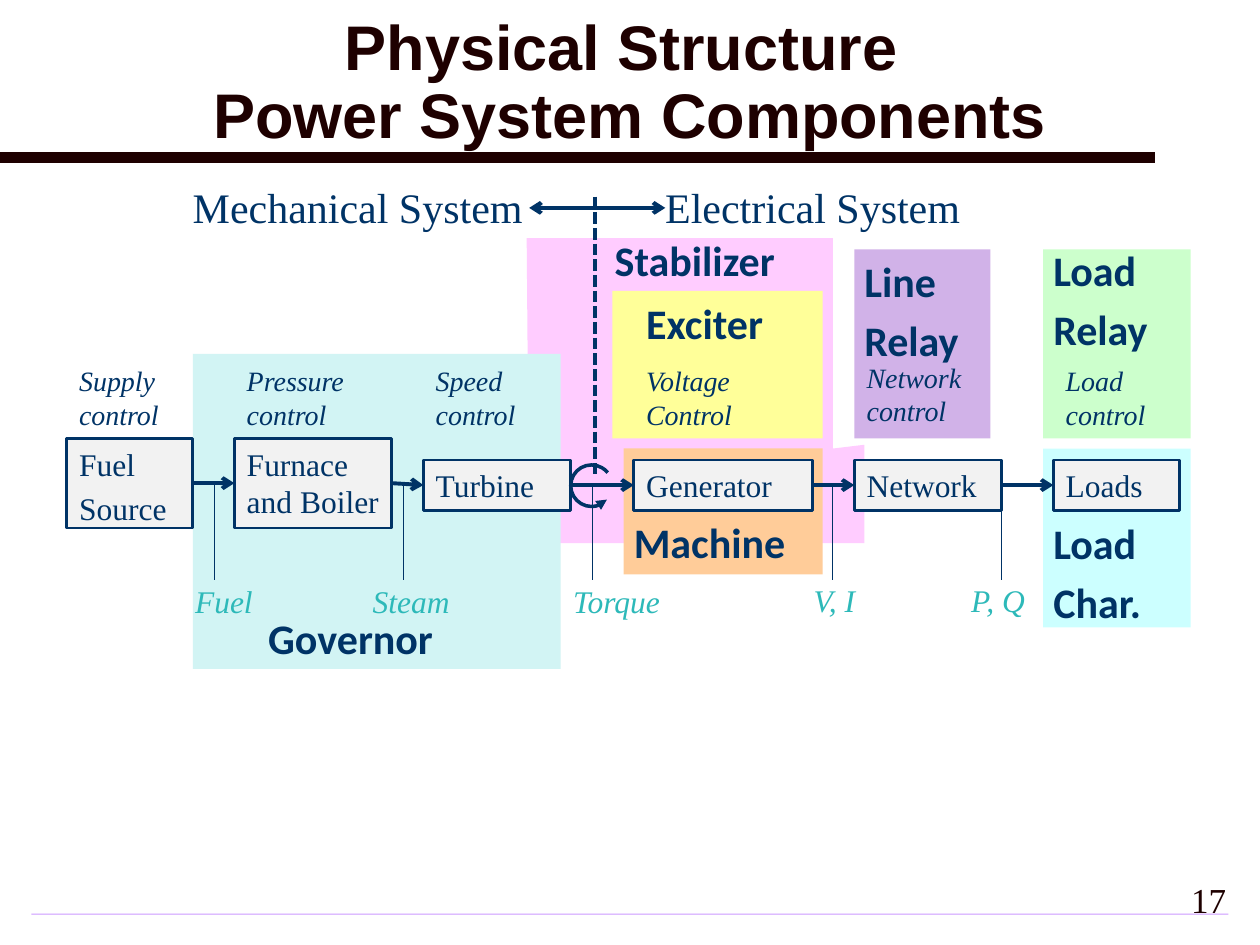
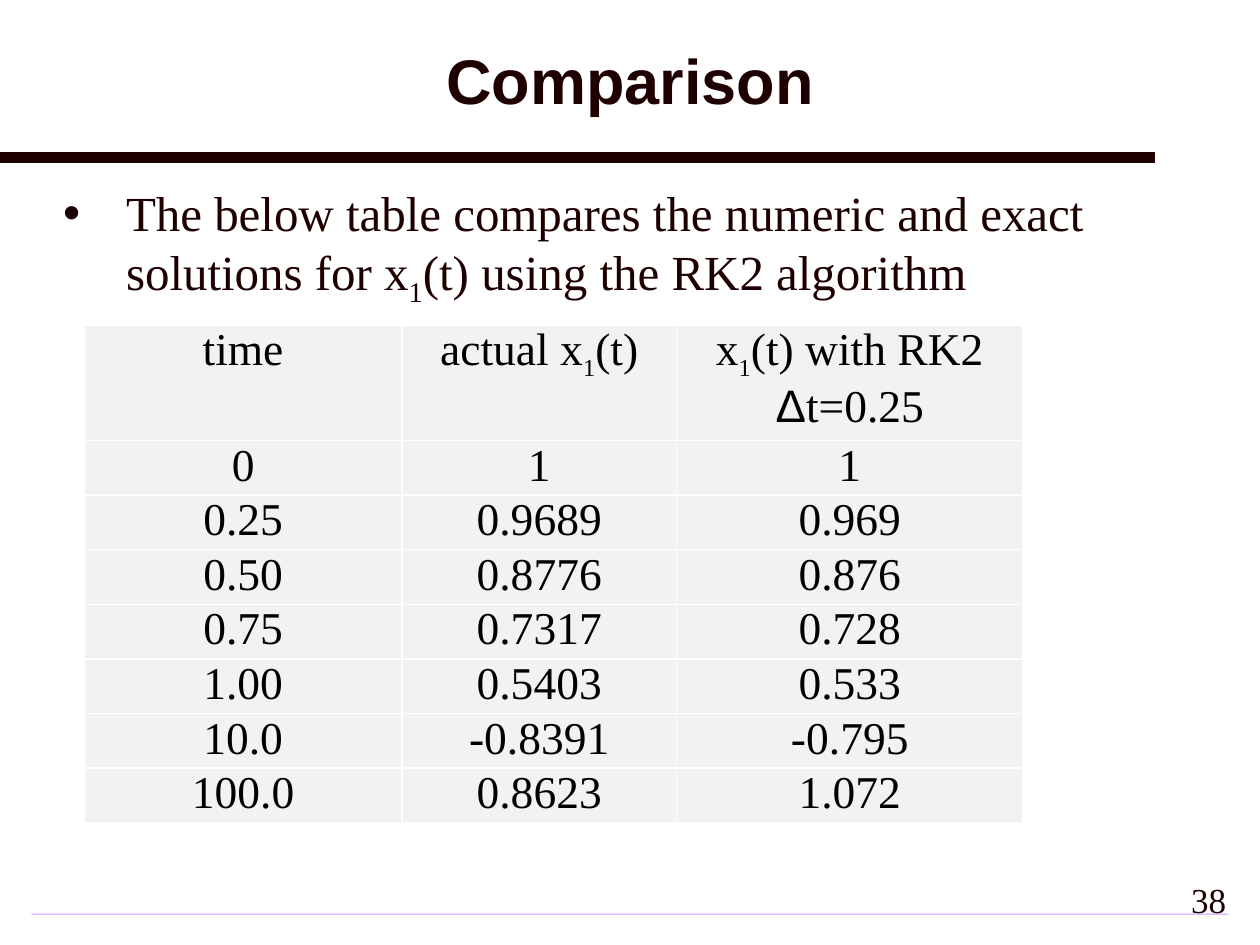
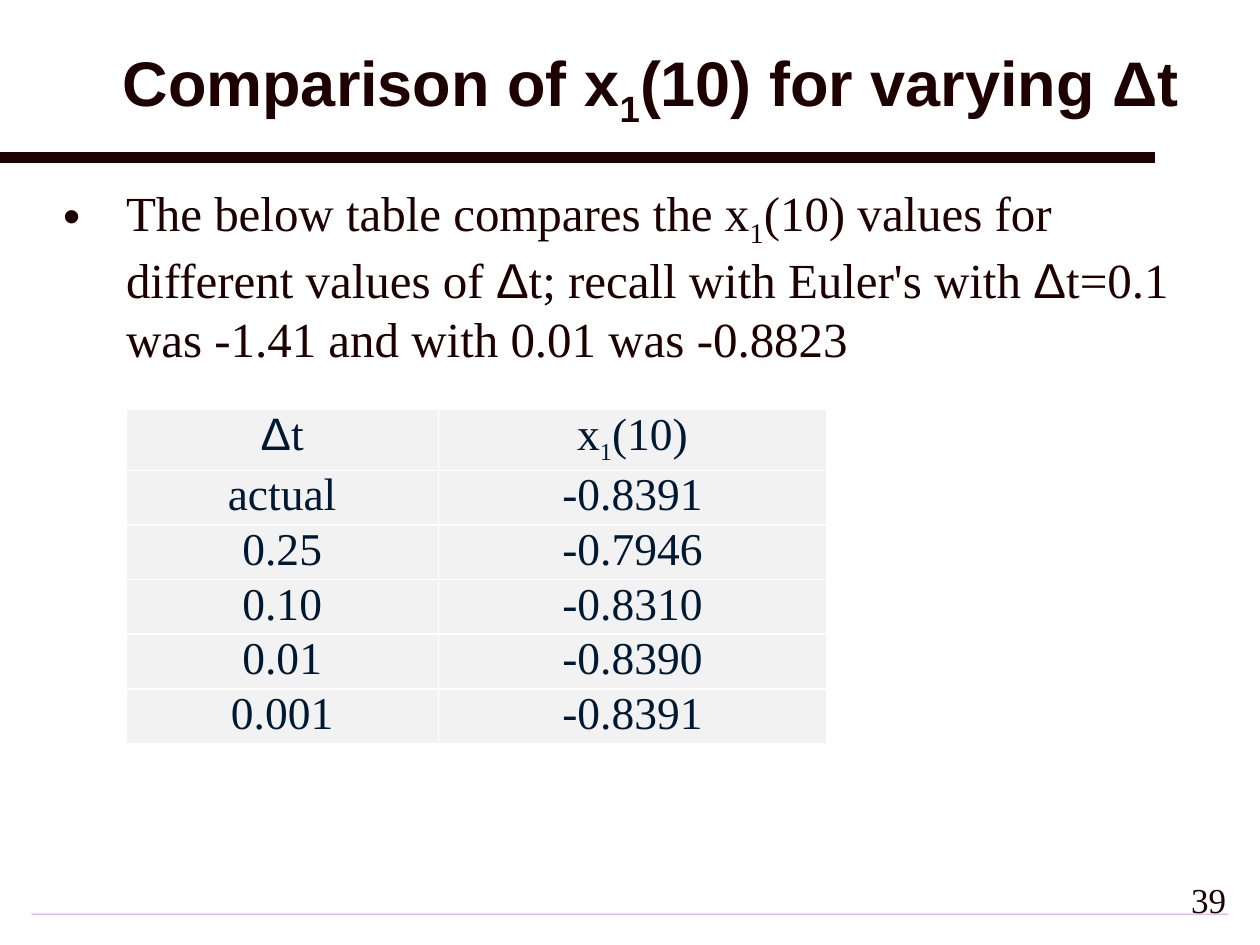
from itertools import pairwise

from lxml.etree import SubElement
from pptx import Presentation
from pptx.dml.color import RGBColor
from pptx.enum.dml import MSO_LINE
from pptx.enum.shapes import MSO_CONNECTOR, MSO_SHAPE
from pptx.enum.text import MSO_ANCHOR, MSO_AUTO_SIZE, PP_ALIGN
from pptx.oxml.ns import qn
from pptx.util import Inches, Pt

SERIF, SANS, HEADING = "Times New Roman", "Arial", "Calibri"
INK, NAVY, TEAL, MIDNIGHT = "1E0000", "003366", "2DB9B9", "001933"
PALE, WHITE, BLACK, LILAC = "F2F2F2", "FFFFFF", "000000", "CC99FF"
LAYOUT_CONTENT, LAYOUT_TITLE_ONLY = 1, 5

STABILIZER_ZONE = [(6.86, 4.31), (6.86, 3.53), (6.61, 3.56), (6.61, 1.89), (4.18, 1.89), (4.2, 4.31)]
STABILIZER_COLOR = "FFCCFF"
ZONES = [
    ((6.78, 1.98, 1.08, 1.5), "D1B2E8"),
    ((8.28, 1.98, 1.17, 1.5), "CCFFCC"),
    ((8.28, 3.56, 1.17, 1.42), "CCFFFF"),
    ((1.53, 2.81, 2.92, 2.5), "D2F4F4"),
    ((4.86, 2.31, 1.67, 1.17), "FFFF99"),
    ((4.95, 3.56, 1.58, 1), "FFCC99"),
]
COMPONENTS = [
    ("Fuel\nSource", (0.53, 3.48, 1, 0.71)),
    ("Furnace and Boiler", (1.86, 3.48, 1.25, 0.71)),
    ("Turbine", (3.36, 3.65, 1.17, 0.4)),
    ("Generator", (5.03, 3.65, 1.42, 0.4)),
    ("Network", (6.78, 3.65, 1.17, 0.4)),
    ("Loads", (8.36, 3.65, 1, 0.4)),
]
CONTROLS = [
    ("Supply control", (0.53, 2.84, 1, 0.64)),
    ("Pressure control", (1.86, 2.84, 1.25, 0.64)),
    ("Speed control", (3.36, 2.84, 1, 0.64)),
    ("Voltage Control", (5.03, 2.84, 1.42, 0.64)),
    ("Network control", (6.78, 2.81, 1.08, 0.64)),
    ("Load control", (8.36, 2.84, 1, 0.64)),
]
SIGNALS = [
    ("Fuel", (1.45, 4.57, 0.92, 0.4), 1.7),
    ("Steam", (2.86, 4.57, 1.25, 0.4), 3.2),
    ("Torque", (4.45, 4.57, 1.12, 0.4), 4.7),
    ("V, I", (6.36, 4.56, 0.67, 0.4), 6.61),
    ("P, Q", (7.61, 4.56, 0.67, 0.4), 7.95),
]
SYSTEMS = [
    ("Mechanical System", (1.53, 1.39, 2.67, 0.51)),
    ("Electrical System", (5.28, 1.39, 3, 0.51)),
]
MODELS = [
    ("Governor", (2.03, 4.81, 2.25, 0.51), 0.1),
    ("Machine", (5.03, 4.05, 1.42, 0.51), 0),
    ("Exciter", (5.03, 2.31, 1.42, 0.51), 0.1),
    ("Load\nChar.", (8.36, 4.06, 1, 0.91), 0),
    ("Load\nRelay", (8.36, 1.89, 1, 0.91), 0),
    ("Line\nRelay", (6.86, 1.98, 0.83, 0.91), 0),
    ("Stabilizer", (4.78, 1.81, 1.58, 0.51), 0.1),
]
SHAFT_Y = 3.85

TITLE_BOX = (0.25, 0.08, 9.5, 1.17)
COMPARISONS = [
    {
        "number": 38,
        "title": "Comparison",
        "title_box": TITLE_BOX,
        "body": "The below table compares the numeric and exact solutions for x~1~(t) using the RK2 algorithm",
        "body_box": (0.4, 1.4, 9.34, 1.27),
        "table_at": (0.67, 2.58),
        "columns": [2.52, 2.18, 2.75],
        "header_height": 0.85,
        "color": BLACK,
        "rows": [
            ("time", "actual x~1~(t)", "x~1~(t) with RK2\nΔt=0.25"),
            ("0", "1", "1"),
            ("0.25", "0.9689", "0.969"),
            ("0.50", "0.8776", "0.876"),
            ("0.75", "0.7317", "0.728"),
            ("1.00", "0.5403", "0.533"),
            ("10.0", "-0.8391", "-0.795"),
            ("100.0", "0.8623", "1.072"),
        ],
    },
    {
        "number": 39,
        "title": "Comparison of x~1~(10) for varying Δt",
        "title_box": (0.5, 0.08, 9.33, 1.17),
        "body": "The below table compares the x~1~(10) values for different values of Δt; "
                "recall with Euler's with Δt=0.1 was -1.41 and with 0.01 was -0.8823",
        "body_box": (0.4, 1.4, 9.34, 1.85),
        "table_at": (1, 3.25),
        "columns": [2.48, 3.08],
        "header_height": 0.45,
        "color": MIDNIGHT,
        "rows": [
            ("Δt", "x~1~(10)"),
            ("actual", "-0.8391"),
            ("0.25", "-0.7946"),
            ("0.10", "-0.8310"),
            ("0.01", "-0.8390"),
            ("0.001", "-0.8391"),
        ],
    },
]
ROW_HEIGHT = 0.4


def rgb(color):
    return RGBColor.from_string(color)


def inches(box):
    return [Inches(length) for length in box]


def add_runs(paragraph, text, sub_size=None):
    for index, piece in enumerate(text.split("~")):
        for part in piece.replace("Δ", "|Δ|").split("|"):
            if not part:
                continue
            run = paragraph.add_run()
            run.text = part
            if part == "Δ":
                run.font.name = SANS
            if index % 2:
                run.font._element.set("baseline", "-25000")
                if sub_size:
                    run.font.size = Pt(sub_size)


def style(paragraph, size, color, face=SERIF, bold=False, italic=False):
    font = paragraph.font
    font.name, font.size, font.bold, font.italic = face, Pt(size), bold, italic
    font.color.rgb = rgb(color)


def write(frame, text, size, color, align=PP_ALIGN.LEFT, sub_size=None, gap=0.2, **look):
    frame.word_wrap = True
    for index, line in enumerate(text.split("\n")):
        paragraph = frame.add_paragraph() if index else frame.paragraphs[0]
        add_runs(paragraph, line, sub_size)
        paragraph.alignment = align
        paragraph.space_before = Pt(gap * size if index else 0)
        style(paragraph, size, color, **look)


def add_label(slide, text, box, size, color, inset=0.1, **look):
    frame = slide.shapes.add_textbox(*inches(box)).text_frame
    frame.margin_left = frame.margin_right = Inches(inset)
    write(frame, text, size, color, **look)


def paint(shape, fill, outline=None):
    shape.shadow.inherit = False
    shape.fill.solid()
    shape.fill.fore_color.rgb = rgb(fill)
    if outline:
        shape.line.color.rgb = rgb(outline)
        shape.line.width = Pt(1.5)
    else:
        shape.line.fill.background()


def add_block(slide, box, fill, outline=None):
    block = slide.shapes.add_shape(MSO_SHAPE.RECTANGLE, *inches(box))
    paint(block, fill, outline)
    return block


def add_ends(line, head=None, tail=None):
    for tag, kind in (("a:headEnd", head), ("a:tailEnd", tail)):
        if kind:
            SubElement(line._get_or_add_ln(), qn(tag), type=kind)


def add_line(slide, start, end, color=NAVY, width=2.25, dash=None, head=None, tail=None):
    connector = slide.shapes.add_connector(MSO_CONNECTOR.STRAIGHT, *inches(start + end))
    connector.line.color.rgb = rgb(color)
    connector.line.width = Pt(width)
    if dash:
        connector.line.dash_style = dash
    add_ends(connector.line, head, tail)
    SubElement(connector._element.spPr, qn("a:effectLst"))
    return connector


def place(placeholder, box):
    placeholder.left, placeholder.top, placeholder.width, placeholder.height = inches(box)
    frame = placeholder.text_frame
    frame.auto_size = MSO_AUTO_SIZE.NONE
    frame.word_wrap = True
    return frame


def start_slide(prs, layout, title, title_box, number):
    slide = prs.slides.add_slide(prs.slide_layouts[layout])
    add_block(slide, (0.25, 7.25, 9.5, 0.01), LILAC)
    add_line(slide, (0, 1.25), (9.17, 1.25), INK, 6)
    frame = place(slide.shapes.title, title_box)
    frame.vertical_anchor = MSO_ANCHOR.MIDDLE
    heading = frame.paragraphs[0]
    for index, line in enumerate(title.split("\n")):
        if index:
            heading.add_line_break()
        add_runs(heading, line)
    heading.alignment = PP_ALIGN.CENTER
    heading.line_spacing = 0.9
    style(heading, 36, INK, face=SANS, bold=True)
    add_label(slide, str(number), (7.75, 6.92, 2.08, 0.5), 20, INK, align=PP_ALIGN.RIGHT)
    return slide


def add_components_slide(prs):
    slide = start_slide(prs, LAYOUT_TITLE_ONLY, "Physical Structure \nPower System Components", TITLE_BOX, 17)

    corners = [inches(corner) for corner in STABILIZER_ZONE]
    outline = slide.shapes.build_freeform(*corners[0])
    outline.add_line_segments(corners[1:], close=True)
    paint(outline.convert_to_shape(), STABILIZER_COLOR)
    for box, color in ZONES:
        add_block(slide, box, color)

    components = []
    for name, box in COMPONENTS:
        component = add_block(slide, box, PALE, NAVY)
        component.text_frame.vertical_anchor = MSO_ANCHOR.TOP
        write(component.text_frame, name, 18, NAVY)
        components.append(component)
    for name, box in CONTROLS:
        add_label(slide, name, box, 16, NAVY, italic=True)
    for name, box in SYSTEMS:
        add_label(slide, name, box, 24, NAVY, inset=0)

    add_line(slide, (4.72, 1.56), (4.72, 3.76), dash=MSO_LINE.SQUARE_DOT)
    add_line(slide, (4.2, 1.65), (5.28, 1.65), head="arrow", tail="arrow")
    for source, target in pairwise(components):
        flow = add_line(slide, (0, 0), (0, 0), tail="arrow")
        flow.begin_connect(source, 3)
        flow.end_connect(target, 1)
    for name, box, x in SIGNALS:
        add_label(slide, name, box, 18, TEAL, italic=True)
        leader = add_line(slide, (x, 4.6), (x, SHAFT_Y), width=0.75)
    network = components[4]
    leader.end_connect(network, 3)

    rotation = slide.shapes.add_shape(MSO_SHAPE.ARC, *inches((4.53, 3.69, 0.33, 0.33)))
    rotation.adjustments[0], rotation.adjustments[1] = 25.21, 192.86
    rotation.shadow.inherit = False
    rotation.fill.background()
    rotation.line.color.rgb = rgb(NAVY)
    rotation.line.width = Pt(2)
    add_ends(rotation.line, head="triangle")

    for name, box, inset in MODELS:
        add_label(slide, name, box, 24, NAVY, inset=inset, face=HEADING, bold=True)


def add_bullet(paragraph, color):
    props = paragraph._p.get_or_add_pPr()
    props.set("marL", str(Inches(0.5)))
    props.set("indent", str(Inches(-0.5)))
    SubElement(SubElement(props, qn("a:buClr")), qn("a:srgbClr"), val=color)
    SubElement(props, qn("a:buChar"), char="•")


def add_borders(cell, color):
    props = cell._tc.get_or_add_tcPr()
    for side in ("a:lnL", "a:lnR", "a:lnT", "a:lnB"):
        border = SubElement(props, qn(side), w=str(Pt(1)))
        SubElement(SubElement(border, qn("a:solidFill")), qn("a:srgbClr"), val=color)


def add_comparison_table(slide, content):
    rows, columns = content["rows"], content["columns"]
    heights = [content["header_height"]] + [ROW_HEIGHT] * (len(rows) - 1)
    box = (*content["table_at"], sum(columns), sum(heights))
    table = slide.shapes.add_table(len(rows), len(columns), *inches(box)).table
    table.first_row = table.horz_banding = False
    for column, width in zip(table.columns, columns):
        column.width = Inches(width)
    for row, height, values in zip(table.rows, heights, rows):
        row.height = Inches(height)
        for cell, value in zip(row.cells, values):
            cell.margin_left = cell.margin_right = Inches(0.07)
            cell.margin_top = cell.margin_bottom = 0
            add_borders(cell, WHITE)
            cell.fill.solid()
            cell.fill.fore_color.rgb = rgb(PALE)
            write(cell.text_frame, value, 26, content["color"], PP_ALIGN.CENTER, sub_size=24, gap=0)


def add_comparison_slide(prs, content):
    slide = start_slide(prs, LAYOUT_CONTENT, content["title"], content["title_box"], content["number"])
    frame = place(slide.placeholders[1], content["body_box"])
    add_bullet(frame.paragraphs[0], INK)
    write(frame, content["body"], 28, INK)
    add_comparison_table(slide, content)


def main():
    prs = Presentation()
    prs.slide_width, prs.slide_height = Inches(10), Inches(7.5)
    add_components_slide(prs)
    for content in COMPARISONS:
        add_comparison_slide(prs, content)
    prs.save("out.pptx")


if __name__ == "__main__":
    main()
